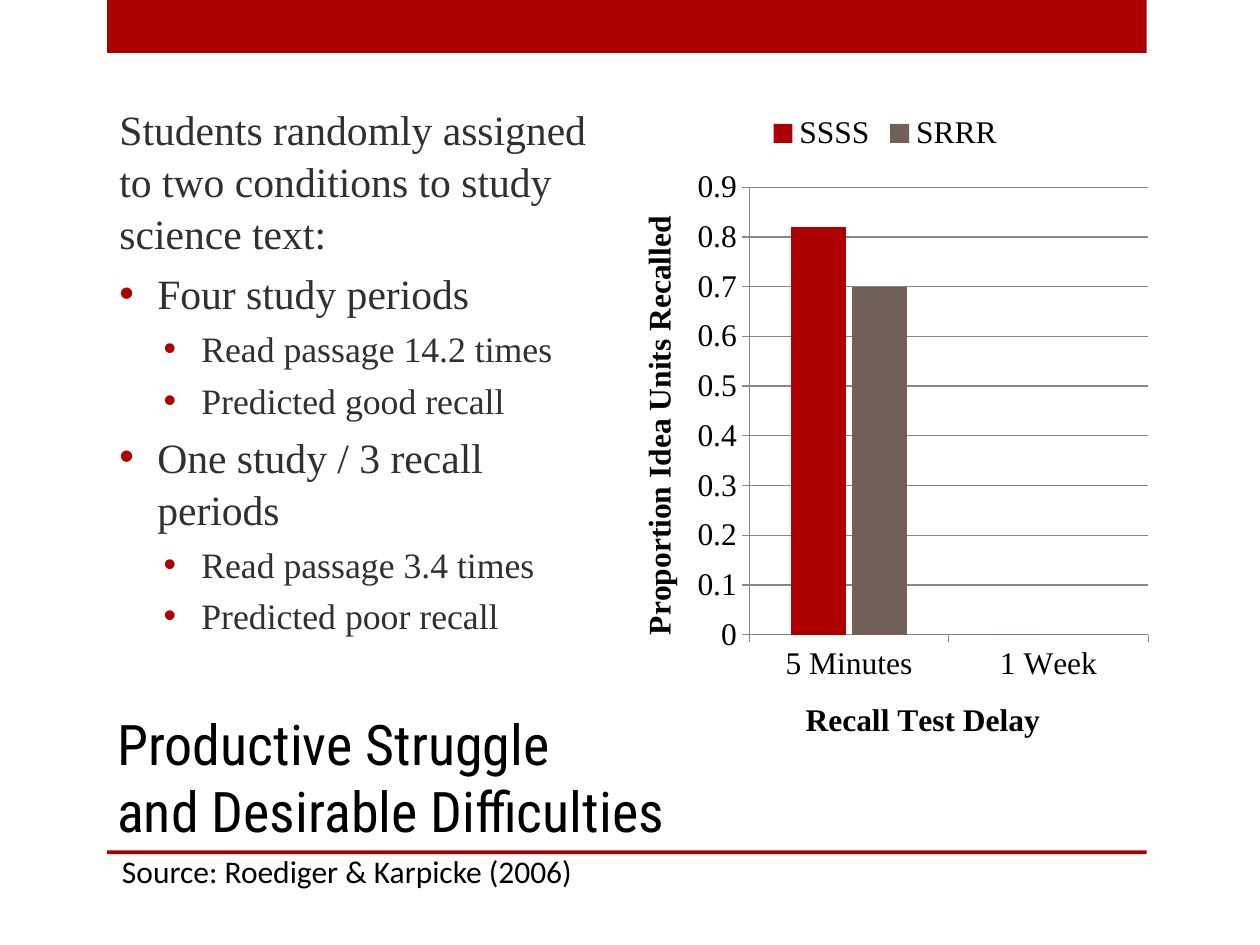
from lxml.etree import SubElement
from pptx import Presentation
from pptx.chart.data import CategoryChartData
from pptx.dml.color import RGBColor
from pptx.enum.chart import XL_CHART_TYPE, XL_LEGEND_POSITION, XL_TICK_MARK
from pptx.enum.shapes import MSO_SHAPE
from pptx.enum.text import MSO_ANCHOR, PP_ALIGN
from pptx.oxml.ns import qn
from pptx.util import Inches, Pt

COLORS = {"red": "AD0101", "taupe": "726056", "body": "303030",
          "black": "000000", "grid": "878787"}
SERIF = "Times New Roman"


def rgb(name):
    return RGBColor.from_string(COLORS[name])


def style(font, face, size, color):
    font.name = face
    font.size = Pt(size)
    font.color.rgb = rgb(color)


deck = Presentation()
deck.slide_width, deck.slide_height = Inches(10), Inches(7.5)
slide = deck.slides.add_slide(deck.slide_layouts[5])

for top, height in [(0, 0.42), (6.75, 0.03)]:
    band = slide.shapes.add_shape(MSO_SHAPE.RECTANGLE, Inches(0.85), Inches(top),
                                  Inches(8.25), Inches(height))
    band.shadow.inherit = False
    band.fill.solid()
    band.fill.fore_color.rgb = rgb("red")
    band.line.fill.background()

title = slide.shapes.title
title.left, title.top = Inches(0.83), Inches(5)
title.width, title.height = Inches(8.25), Inches(1.75)
title.text_frame.vertical_anchor = MSO_ANCHOR.BOTTOM
heading = title.text_frame.paragraphs[0]
heading.alignment = PP_ALIGN.LEFT
heading.add_run().text = "Productive Struggle"
heading.add_line_break()
heading.add_run().text = "and Desirable Difficulties"
style(heading.font, "Roboto Condensed", 32, "black")

conditions = slide.shapes.add_textbox(Inches(0.85), Inches(0.87),
                                      Inches(4), Inches(4.12)).text_frame
conditions.word_wrap = True
conditions.vertical_anchor = MSO_ANCHOR.MIDDLE
points = [
    (None, "Students randomly assigned to two conditions to study science text:"),
    (0, "Four study periods"),
    (1, "Read passage 14.2 times"),
    (1, "Predicted good recall"),
    (0, "One study / 3 recall periods"),
    (1, "Read passage 3.4 times"),
    (1, "Predicted poor recall"),
]
for index, (level, wording) in enumerate(points):
    point = conditions.add_paragraph() if index else conditions.paragraphs[0]
    point.text = wording
    point.level = level or 0
    size = 20.4 if level else 23.8
    style(point.font, SERIF, size, "body")
    point.line_spacing = 1.04
    point.space_before = Pt(round(size * 0.2, 1))
    if level is not None:
        properties = point._p.get_or_add_pPr()
        properties.set("marL", str(Inches(0.3 + 0.35 * level)))
        properties.set("indent", str(Inches(-0.3)))
        bullet_color = SubElement(properties, qn("a:buClr"))
        SubElement(bullet_color, qn("a:srgbClr"), val=COLORS["red"])
        SubElement(properties, qn("a:buFont"), typeface="Arial")
        SubElement(properties, qn("a:buChar"), char="•")

recall = CategoryChartData()
recall.categories = ["5 Minutes", "1 Week"]
recall.add_series("SSSS", (0.82, 0))
recall.add_series("SRRR", (0.7, 0))
chart = slide.shapes.add_chart(XL_CHART_TYPE.COLUMN_CLUSTERED, Inches(4.85), Inches(0.8),
                               Inches(4.35), Inches(5.3), recall).chart
style(chart.font, SERIF, 18, "black")
chart.has_title = False
chart.has_legend = True
chart.legend.position = XL_LEGEND_POSITION.TOP
chart.legend.include_in_layout = False

columns = chart.plots[0]
columns.gap_width = 150
columns.overlap = -10
columns.vary_by_categories = False
for series, color in zip(columns.series, ["red", "taupe"]):
    series.format.fill.solid()
    series.format.fill.fore_color.rgb = rgb(color)

for axis, label in [(chart.category_axis, "Recall Test Delay"),
                    (chart.value_axis, "Proportion Idea Units Recalled")]:
    axis.major_tick_mark = XL_TICK_MARK.OUTSIDE
    axis.minor_tick_mark = XL_TICK_MARK.NONE
    axis.format.line.color.rgb = rgb("grid")
    caption = axis.axis_title.text_frame
    caption.text = label
    style(caption.paragraphs[0].font, SERIF, 18, "black")
    caption.paragraphs[0].font.bold = True

scale = chart.value_axis
scale.minimum_scale, scale.maximum_scale, scale.major_unit = 0, 0.9, 0.1
scale.has_major_gridlines = True
scale.major_gridlines.format.line.color.rgb = rgb("grid")

source = slide.shapes.add_textbox(Inches(0.87), Inches(6.71),
                                  Inches(3.83), Inches(0.4)).text_frame
source.word_wrap = False
source.text = "Source: Roediger & Karpicke (2006)"
style(source.paragraphs[0].font, "Calibri", 18, "black")

deck.save("out.pptx")
